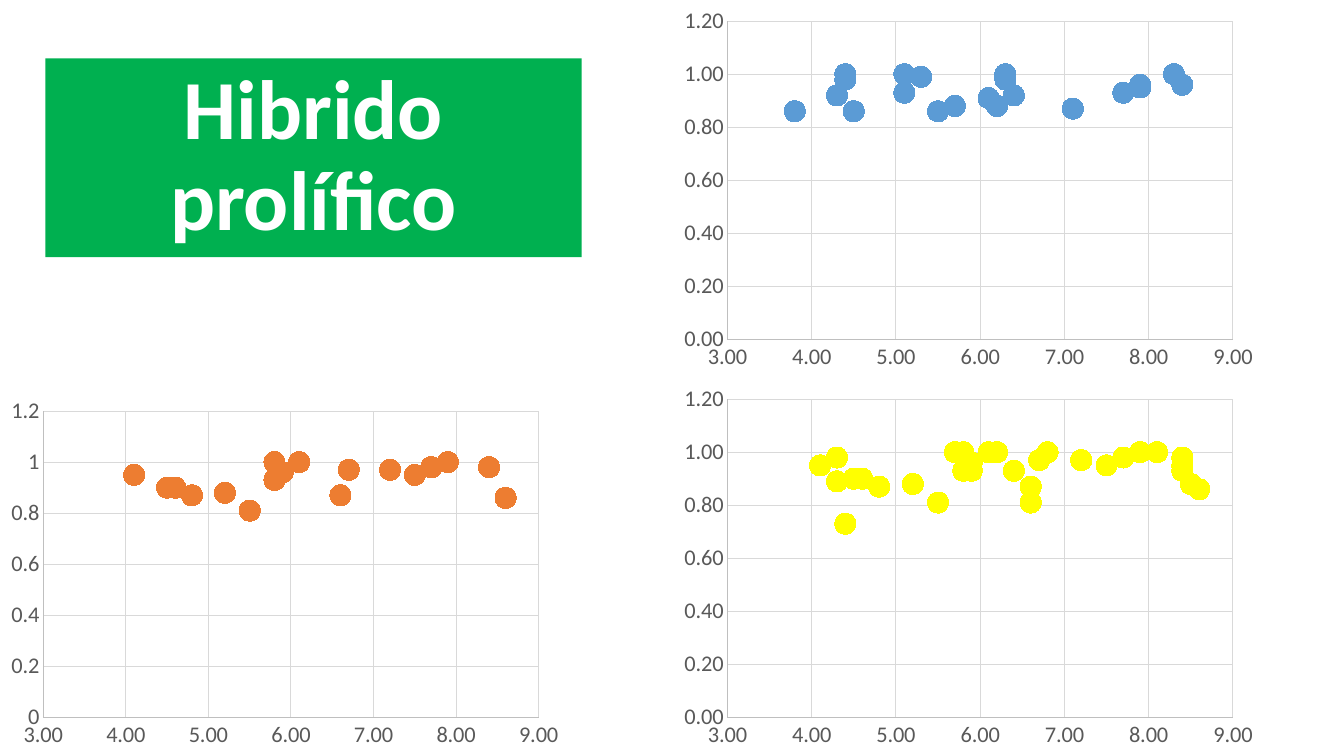
import pptx
import pptx.chart.data
import pptx.dml.color
import pptx.enum.chart
import pptx.enum.text
import pptx.util
from pptx.util import Inches

COLORS = {
    "banner": "00B050", "banner_text": "FFFFFF",
    "blue": "5B9BD5", "yellow": "FFFF00", "orange": "ED7D31",
    "label": "595959", "axis": "BFBFBF", "grid": "D9D9D9",
}
FONT = "Calibri"


def rgb(name):
    return pptx.dml.color.RGBColor.from_string(COLORS[name])


blue_points = [
    (7.1, 0.87), (6.3, 0.98), (5.3, 0.99), (4.4, 1), (5.5, 0.86), (3.8, 0.86),
    (5.7, 0.88), (6.1, 0.91), (6.2, 0.88), (7.7, 0.93), (6.4, 0.92), (5.1, 0.93),
    (4.5, 0.86), (4.3, 0.92), (4.4, 0.98), (7.9, 0.96), (5.1, 1), (6.3, 0.99),
    (8.3, 1), (7.9, 0.95), (8.4, 0.96), (6.3, 1),
]
orange_points = [
    (5.5, 0.81), (8.6, 0.86), (4.8, 0.87), (6.6, 0.87), (4.6, 0.9), (5.8, 0.93),
    (6.7, 0.97), (4.5, 0.9), (7.5, 0.95), (8.4, 0.98), (7.2, 0.97), (5.8, 1),
    (7.9, 1), (5.2, 0.88), (5.9, 0.96), (6.1, 1), (4.1, 0.95), (7.7, 0.98),
]
yellow_points = [
    (4.3, 0.89), (8.4, 0.93), (8.4, 0.95), (8.5, 0.88), (4.3, 0.98), (4.6, 0.9),
    (4.4, 0.73), (6.2, 1), (6.8, 1), (5.9, 0.93), (6.4, 0.93), (5.7, 1),
    (6.6, 0.81), (8.1, 1),
] + orange_points

scatters = [
    ("blue", blue_points, (6.67, 0, 5.87, 3.75), "0.00"),
    ("yellow", yellow_points, (6.67, 3.75, 5.87, 3.75), "0.00"),
    ("orange", orange_points, (0, 3.87, 5.65, 3.63), "General"),
]

deck = pptx.Presentation()
deck.slide_width = Inches(13.33)
deck.slide_height = Inches(7.5)
slide = deck.slides.add_slide(deck.slide_layouts[5])

heading = slide.shapes.title
heading.left, heading.top = Inches(0.45), Inches(0.58)
heading.width, heading.height = Inches(5.32), Inches(1.97)
heading.fill.solid()
heading.fill.fore_color.rgb = rgb("banner")
heading.text_frame.word_wrap = True
heading.text_frame.auto_size = pptx.enum.text.MSO_AUTO_SIZE.NONE
heading.text_frame.vertical_anchor = pptx.enum.text.MSO_ANCHOR.MIDDLE
heading_line = heading.text_frame.paragraphs[0]
heading_line.alignment = pptx.enum.text.PP_ALIGN.CENTER
heading_line.line_spacing = 0.9
heading_run = heading_line.add_run()
heading_run.text = "Hibrido prolífico"
heading_run.font.name = FONT
heading_run.font.size = pptx.util.Pt(60)
heading_run.font.bold = True
heading_run.font.color.rgb = rgb("banner_text")

for color, points, place, y_format in scatters:
    data = pptx.chart.data.XyChartData()
    observations = data.add_series("Series 1")
    for x, y in points:
        observations.add_data_point(x, y)
    chart = slide.shapes.add_chart(
        pptx.enum.chart.XL_CHART_TYPE.XY_SCATTER, *map(Inches, place), data
    ).chart
    chart.has_title = False
    chart.has_legend = False
    chart.font.name = FONT
    chart.font.size = pptx.util.Pt(10)

    plot = chart.plots[0]
    plot.vary_by_categories = False
    series = plot.series[0]
    series.format.line.fill.background()
    series.marker.style = pptx.enum.chart.XL_MARKER_STYLE.CIRCLE
    series.marker.size = 15
    series.marker.format.fill.solid()
    series.marker.format.fill.fore_color.rgb = rgb(color)
    series.marker.format.line.color.rgb = rgb(color)

    for axis, low, high, step, number_format in [
        (chart.category_axis, 3, 9, 1, "0.00"),
        (chart.value_axis, 0, 1.2, 0.2, y_format),
    ]:
        axis.minimum_scale = low
        axis.maximum_scale = high
        axis.major_unit = step
        axis.major_tick_mark = pptx.enum.chart.XL_TICK_MARK.NONE
        axis.minor_tick_mark = pptx.enum.chart.XL_TICK_MARK.NONE
        axis.has_major_gridlines = True
        for line, line_color in [
            (axis.format.line, "axis"),
            (axis.major_gridlines.format.line, "grid"),
        ]:
            line.color.rgb = rgb(line_color)
            line.width = pptx.util.Pt(0.75)
        labels = axis.tick_labels
        labels.number_format = number_format
        labels.number_format_is_linked = False
        labels.font.name = FONT
        labels.font.size = pptx.util.Pt(16)
        labels.font.color.rgb = rgb("label")

deck.save("out.pptx")
